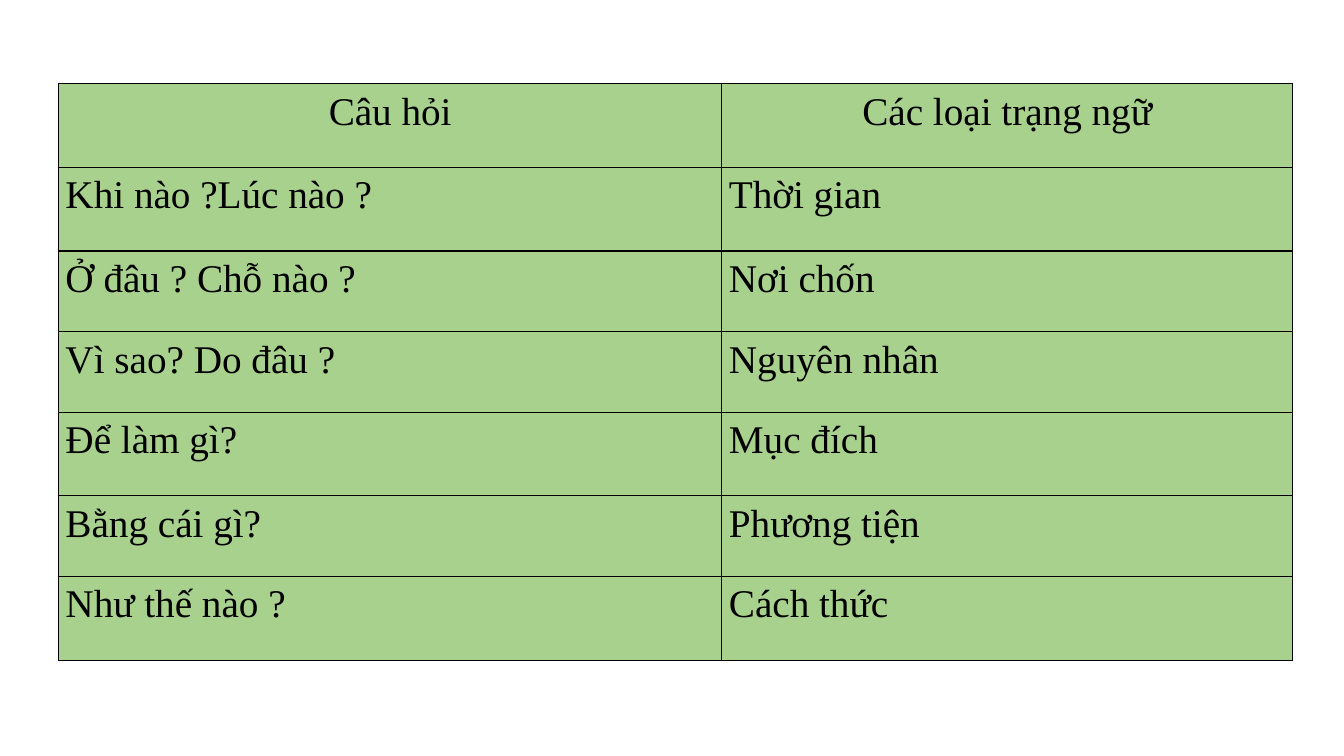
from lxml.etree import SubElement
from pptx import Presentation
from pptx.dml.color import RGBColor
from pptx.enum.text import MSO_ANCHOR, PP_ALIGN
from pptx.oxml.ns import qn
from pptx.util import Inches, Pt

ROWS = [
    ("Câu hỏi", "Các loại trạng ngữ"),
    ("Khi nào ?Lúc nào ?", "Thời gian"),
    ("Ở đâu ? Chỗ nào ?", "Nơi chốn"),
    ("Vì sao? Do đâu ?", "Nguyên nhân"),
    ("Để làm gì?", "Mục đích"),
    ("Bằng cái gì?", "Phương tiện"),
    ("Như thế nào ?", "Cách thức"),
]
COLUMN_WIDTHS = [6.58, 5.66]
ROW_HEIGHTS = [0.83, 0.83, 0.8, 0.8, 0.83, 0.8, 0.83]
LEFT, TOP = 0.58, 0.83
COLORS = {"cell": "A9D18E", "ink": "000000"}
CELL_FORMAT = {
    "margin_left": Inches(0.07),
    "margin_right": Inches(0.07),
    "margin_top": 0,
    "margin_bottom": 0,
    "vertical_anchor": MSO_ANCHOR.TOP,
}
PARAGRAPH_FORMAT = {"line_spacing": 1.15, "space_after": Pt(10)}
FONT_FORMAT = {"name": "Times New Roman", "size": Pt(28), "bold": False}


def apply_format(target, values):
    for name, value in values.items():
        setattr(target, name, value)


def add_borders(cell):
    properties = cell._tc.get_or_add_tcPr()
    for side in ("a:lnL", "a:lnR", "a:lnT", "a:lnB"):
        line = SubElement(properties, qn(side), w=str(Pt(1)))
        fill = SubElement(line, qn("a:solidFill"))
        SubElement(fill, qn("a:srgbClr"), val=COLORS["ink"])


def fill_cell(cell, text, alignment):
    apply_format(cell, CELL_FORMAT)
    add_borders(cell)
    cell.fill.solid()
    cell.fill.fore_color.rgb = RGBColor.from_string(COLORS["cell"])
    para = cell.text_frame.paragraphs[0]
    para.alignment = alignment
    apply_format(para, PARAGRAPH_FORMAT)
    span = para.add_run()
    span.text = text
    apply_format(span.font, FONT_FORMAT)
    span.font.color.rgb = RGBColor.from_string(COLORS["ink"])


def main():
    deck = Presentation()
    deck.slide_width, deck.slide_height = Inches(13.33), Inches(7.5)
    page = deck.slides.add_slide(deck.slide_layouts[6])
    table = page.shapes.add_table(
        len(ROWS), len(COLUMN_WIDTHS), Inches(LEFT), Inches(TOP),
        Inches(sum(COLUMN_WIDTHS)), Inches(sum(ROW_HEIGHTS)),
    ).table
    for column, width in zip(table.columns, COLUMN_WIDTHS):
        column.width = Inches(width)
    for row, height in zip(table.rows, ROW_HEIGHTS):
        row.height = Inches(height)
    for row_index, texts in enumerate(ROWS):
        alignment = PP_ALIGN.LEFT if row_index else PP_ALIGN.CENTER
        for column_index, text in enumerate(texts):
            fill_cell(table.cell(row_index, column_index), text, alignment)
    deck.save("out.pptx")


if __name__ == "__main__":
    main()
